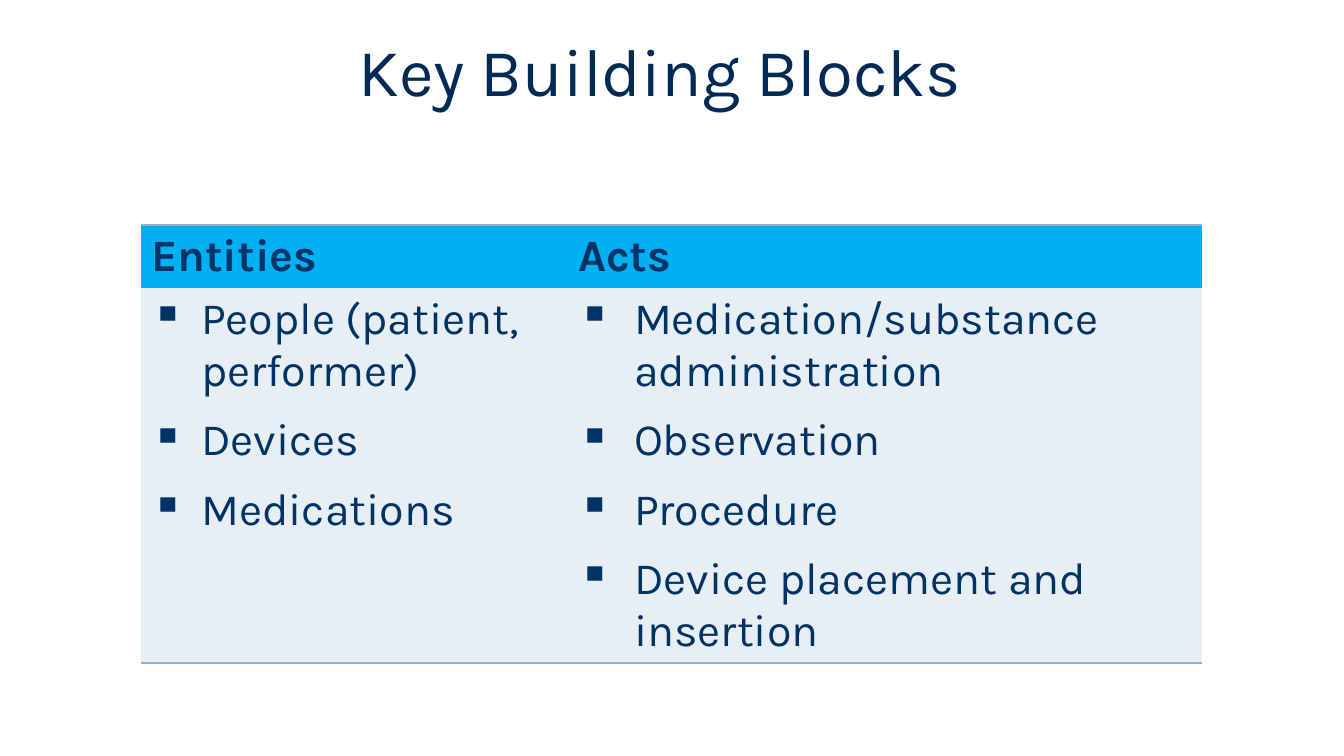
from pptx import Presentation
from pptx.dml.color import RGBColor
from pptx.enum.text import MSO_ANCHOR as Anchor, MSO_AUTO_SIZE as Fit, PP_ALIGN as Align
from pptx.oxml import parse_xml
from pptx.oxml.ns import nsdecls, qn
from pptx.util import Pt
from lxml.etree import SubElement

SCALE = 914400 / 100.8
NAVY = RGBColor(0x00, 0x2A, 0x56)
BLUE = RGBColor(0x00, 0x33, 0x66)
CYAN = RGBColor(0x00, 0xB0, 0xF0)
STEEL = RGBColor(0x8E, 0xB3, 0xC8)
FACE = "Karla"
PLAIN = "{2D5ABB26-0587-4C30-8999-92F81FD0307C}"
TITLE = "Key Building Blocks"
COLUMNS = [
    ("Entities", 427, 50, ["People (patient, performer)", "Devices", "Medications"]),
    ("Acts", 634, 56, ["Medication/substance administration", "Observation",
                       "Procedure", "Device placement and insertion"]),
]


def px(count):
    return round(count * SCALE)


def write(frame, lines, size=32, color=BLUE, bold=False, align=Align.LEFT,
          hang=0, after=0):
    for index, line in enumerate(lines):
        para = frame.paragraphs[0] if index == 0 else frame.add_paragraph()
        para.alignment = align
        if hang:
            props = para._p.get_or_add_pPr()
            props.set("marL", str(px(hang)))
            props.set("indent", str(-px(hang)))
            SubElement(props, qn("a:buChar")).set("char", "▪")
            para.space_after = Pt(after)
        run = para.add_run()
        run.text = line
        font = run.font
        font.name, font.size, font.bold = FACE, Pt(size), bold
        font.color.rgb = color


def paint(cell, color, edge, alpha=100):
    cell.fill.solid()
    cell.fill.fore_color.rgb = color
    props = cell._tc.get_or_add_tcPr()
    if alpha < 100:
        tone = props.find(".//" + qn("a:srgbClr"))
        SubElement(tone, qn("a:alpha")).set("val", str(alpha * 1000))
    props.insert(0, parse_xml(
        f'<a:{edge} {nsdecls("a")} w="{Pt(1)}"><a:solidFill>'
        f'<a:srgbClr val="{STEEL}"/></a:solidFill></a:{edge}>'))


def head(slide, left, top, width, height):
    title = slide.shapes.title
    title.left, title.top = px(left), px(top)
    title.width, title.height = px(width), px(height)
    frame = title.text_frame
    frame.word_wrap = True
    frame.auto_size = Fit.NONE
    frame.vertical_anchor = Anchor.MIDDLE
    write(frame, [TITLE], size=48, color=NAVY, align=Align.CENTER)


def blocks(slide, left, top, width, height, bar=63):
    shape = slide.shapes.add_table(2, len(COLUMNS), px(left), px(top),
                                   px(width), px(height))
    table = shape.table
    table._tbl.tblPr.find(qn("a:tableStyleId")).text = PLAIN
    table.horz_banding = False
    table.rows[0].height = px(bar)
    table.rows[1].height = px(height - bar)
    for index, (name, span, hang, items) in enumerate(COLUMNS):
        table.columns[index].width = px(span)
        top_cell, body = table.cell(0, index), table.cell(1, index)
        paint(top_cell, CYAN, "lnT")
        write(top_cell.text_frame, [name], bold=True)
        paint(body, STEEL, "lnB", alpha=20)
        write(body.text_frame, items, hang=hang, after=12)


def main():
    deck = Presentation()
    deck.slide_width, deck.slide_height = px(1344), px(756)
    slide = deck.slides.add_slide(deck.slide_layouts[5])
    blocks(slide, 141, 225, 1061, 437)
    head(slide, 179, 11, 962, 118)
    deck.save("out.pptx")


if __name__ == "__main__":
    main()
